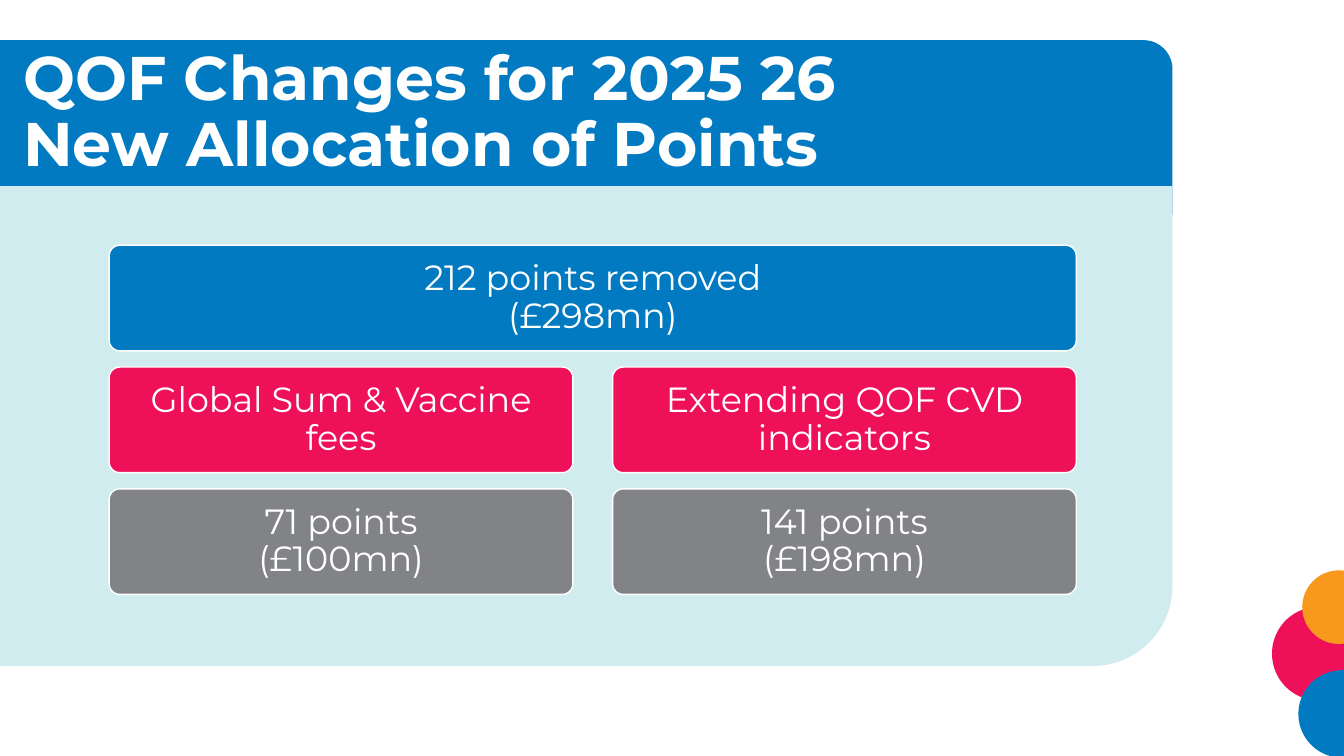
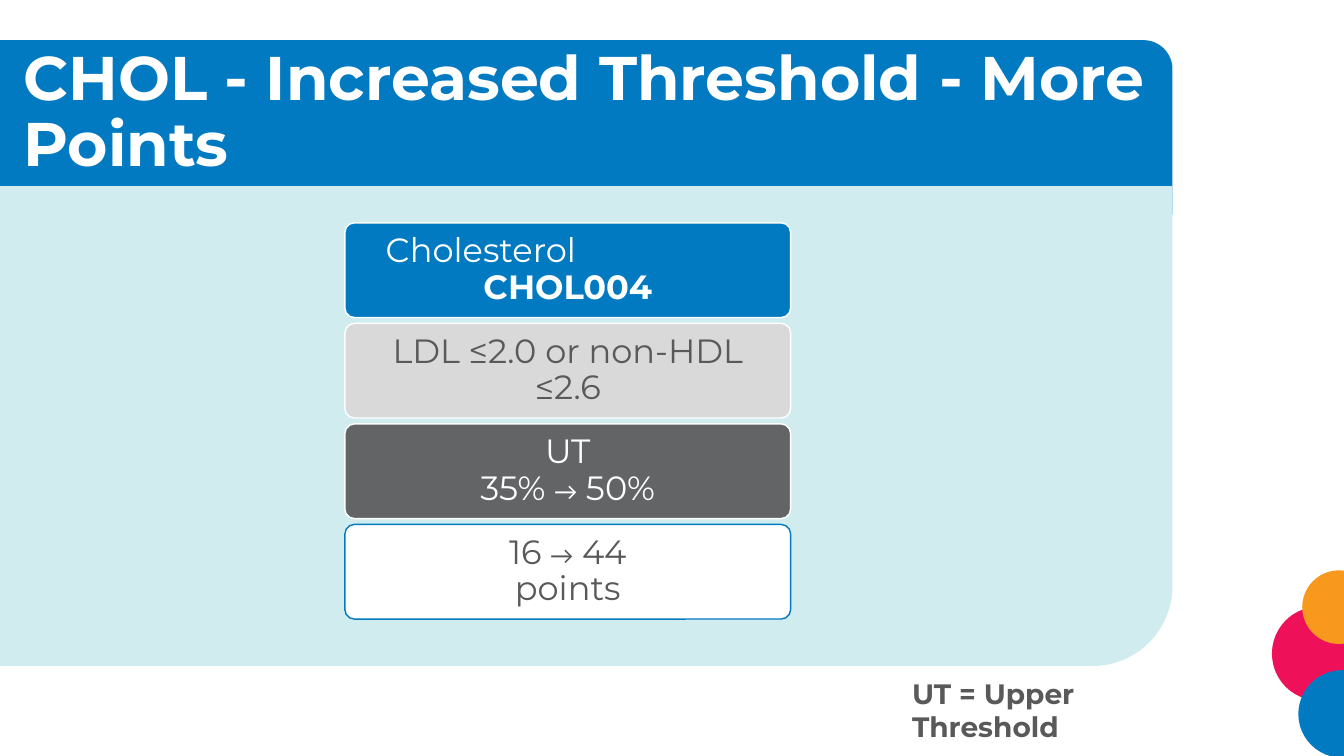
from pptx import Presentation
from pptx.dml.color import RGBColor
from pptx.enum import shapes, text
from pptx.util import Pt

BLUE = RGBColor(0x01, 0x7A, 0xC2)
PALE = RGBColor(0xD0, 0xEC, 0xEF)
PINK = RGBColor(0xEE, 0x10, 0x59)
ORANGE = RGBColor(0xF8, 0x98, 0x1D)
GREY = RGBColor(0x82, 0x83, 0x86)
DARK = RGBColor(0x63, 0x64, 0x66)
LIGHT = RGBColor(0xD9, 0xD9, 0xD9)
INK = RGBColor(0x59, 0x59, 0x59)
WHITE = RGBColor(0xFF, 0xFF, 0xFF)
FONT, ARROW_FONT, ARROW = "Montserrat", "Calibri", "→"
LEFT, CENTER = text.PP_ALIGN.LEFT, text.PP_ALIGN.CENTER
SHAPE = shapes.MSO_SHAPE


def write(frame, words, size=24, color=WHITE, bold=False, align=CENTER, spacing=0.9, indent=0):
    """Add one paragraph, breaking at newlines and setting arrows in their own font."""
    paragraph = frame.paragraphs[0]
    if paragraph.runs:
        paragraph = frame.add_paragraph()
    paragraph.alignment, paragraph.line_spacing = align, spacing
    if indent:
        paragraph._p.get_or_add_pPr().set("marL", str(Pt(indent)))
    for row, line in enumerate(words.split("\n")):
        if row:
            paragraph.add_line_break()
        for piece in line.replace(ARROW, f"|{ARROW}|").split("|"):
            run = paragraph.add_run()
            run.text = piece
            is_arrow = piece == ARROW
            run.font.name = ARROW_FONT if is_arrow else FONT
            run.font.size = Pt(18 if is_arrow else size)
            run.font.bold = bold
            run.font.color.rgb = color


def draw(slide, preset, box, fill, line=None):
    """Draw a flat preset shape in the given box."""
    shape = slide.shapes.add_shape(preset, *map(Pt, box))
    shape.shadow.inherit = False
    shape.fill.solid()
    shape.fill.fore_color.rgb = fill
    if line is None:
        shape.line.fill.background()
    else:
        shape.line.color.rgb = line
        shape.line.width = Pt(1)
    return shape


def text_area(slide, box, wrap=True):
    """Add a text box and return its frame."""
    frame = slide.shapes.add_textbox(*map(Pt, box)).text_frame
    frame.word_wrap = wrap
    return frame


def card(slide, box, fill, line=WHITE):
    """Draw a rounded card and return its text frame."""
    shape = draw(slide, SHAPE.ROUNDED_RECTANGLE, box, fill, line)
    shape.adjustments[0] = 0.1
    frame = shape.text_frame
    frame.word_wrap = True
    frame.vertical_anchor = text.MSO_ANCHOR.MIDDLE
    frame.margin_left = frame.margin_right = Pt(9.2)
    frame.margin_top = frame.margin_bottom = Pt(9.2)
    return frame


def corner_circles(slide, left, top):
    """Place the three overlapping circles from their top-left corner."""
    for x, y, diameter, fill in (
        (0, 26, 67, PINK),
        (18.8, 71.3, 62.6, BLUE),
        (21.6, 0, 52.6, ORANGE),
    ):
        draw(slide, SHAPE.OVAL, (left + x, top + y, diameter, diameter), fill)


def titled_slide(deck, title):
    """Add a slide with the title band, pale panel and corner circles."""
    slide = deck.slides.add_slide(deck.slide_layouts[6])
    draw(slide, SHAPE.ROUND_1_RECTANGLE, (0, 28.7, 837.5, 124.6), BLUE)
    panel = draw(slide, SHAPE.ROUND_1_RECTANGLE, (0, 133.1, 837.5, 342.7), PALE)
    panel._element.spPr.xfrm.set("flipV", "1")
    corner_circles(slide, 908.6, 407.4)
    heading = text_area(slide, (9.5, 28.8, 832, 105))
    heading.vertical_anchor = text.MSO_ANCHOR.MIDDLE
    write(heading, title, size=44, bold=True, align=LEFT)
    return slide


def allocation_grid(slide, left, top, width, height):
    """Place the removed points above two columns showing where they go."""
    row_gap, column_gap = 11.6, 28.4
    card_height = (height - 2 * row_gap) / 3
    card_width = (width - column_gap) / 2
    removed = card(slide, (left, top, width, card_height), BLUE)
    write(removed, "212 points removed\n(£298mn)", size=25)
    columns = (
        ("Global Sum & Vaccine fees", "71 points\n(£100mn)"),
        ("Extending QOF CVD indicators", "141 points\n(£198mn)"),
    )
    for column, (use, points) in enumerate(columns):
        x = left + column * (card_width + column_gap)
        for row, (words, fill) in enumerate(((use, PINK), (points, GREY)), start=1):
            y = top + row * (card_height + row_gap)
            write(card(slide, (x, y, card_width, card_height), fill), words, size=25)


def indicator_stack(slide, left, top, width, height):
    """Stack the indicator's name, target, threshold and points."""
    gap = 4.2
    card_height = (height - 3 * gap) / 4
    levels = (
        (BLUE, WHITE, WHITE, None),
        (LIGHT, WHITE, INK, "LDL ≤2.0 or non-HDL ≤2.6"),
        (DARK, WHITE, WHITE, "UT\n35% → 50%"),
        (WHITE, BLUE, INK, "16 → 44\npoints"),
    )
    for row, (fill, line, color, words) in enumerate(levels):
        y = top + row * (card_height + gap)
        frame = card(slide, (left, y, width, card_height), fill, line)
        if words:
            write(frame, words, color=color)
        else:
            write(frame, "Cholesterol", align=LEFT, indent=18)
            write(frame, "CHOL004", bold=True)


def main():
    """Build and save the two slides."""
    deck = Presentation()
    deck.slide_width, deck.slide_height = Pt(960), Pt(540)

    allocation = titled_slide(deck, "QOF Changes for 2025 26\nNew Allocation of Points")
    allocation_grid(allocation, 78, 175.2, 690.8, 249.4)

    cholesterol = titled_slide(deck, "CHOL - Increased Threshold - More Points")
    indicator_stack(cholesterol, 246.4, 159.2, 318.4, 283)
    key = text_area(cholesterol, (644.4, 479.5, 197.3, 56), wrap=False)
    write(key, "UT = Upper\nThreshold", size=20, color=INK, bold=True, align=LEFT, spacing=1.0)

    deck.save("out.pptx")


if __name__ == "__main__":
    main()
